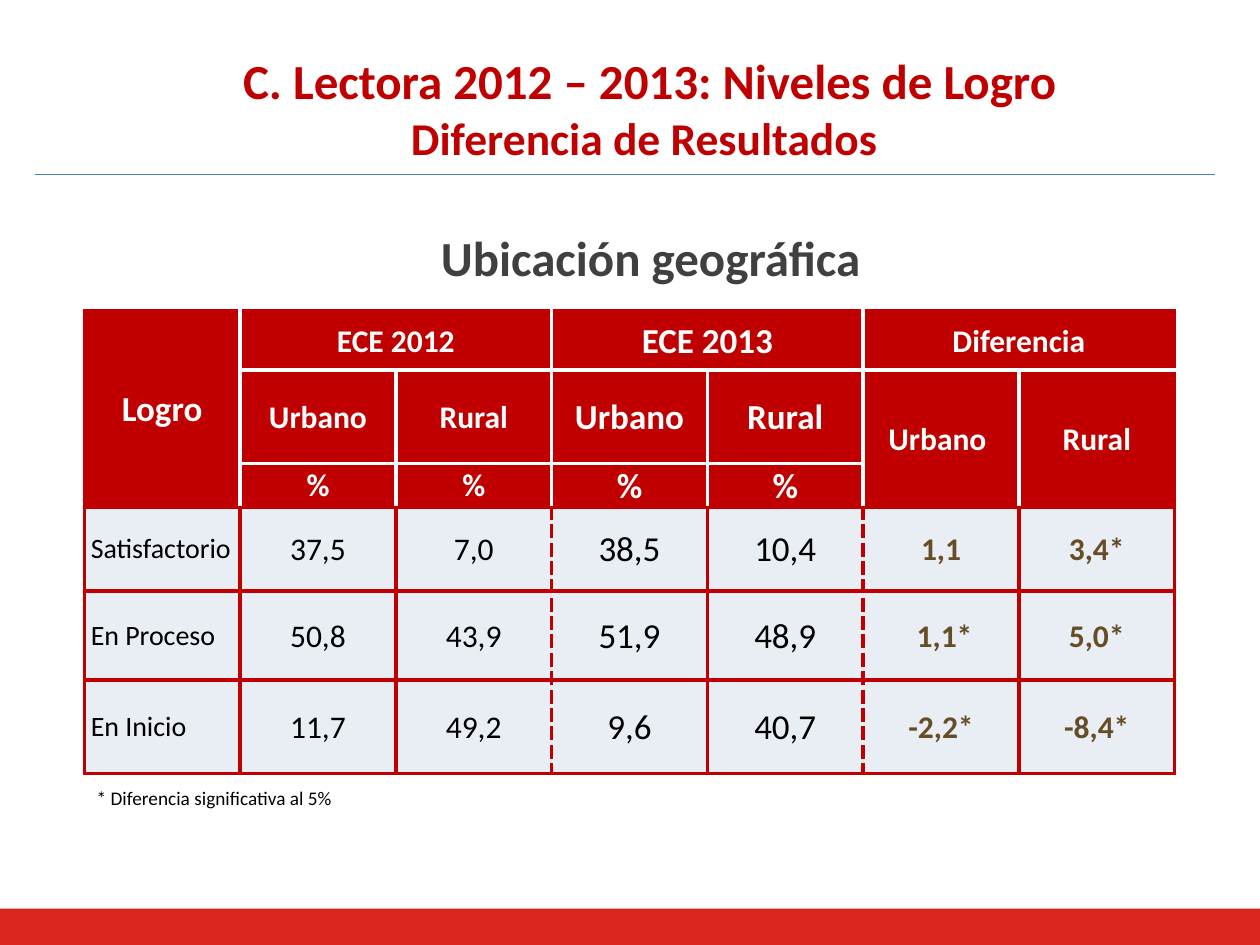
from dataclasses import dataclass

from lxml import etree
from pptx import Presentation
from pptx.dml.color import RGBColor
from pptx.enum.shapes import MSO_CONNECTOR, MSO_SHAPE
from pptx.enum.text import MSO_ANCHOR, PP_ALIGN
from pptx.oxml.ns import qn
from pptx.util import Cm, Pt

LEFT, CENTER = PP_ALIGN.LEFT, PP_ALIGN.CENTER
TOP, MIDDLE = MSO_ANCHOR.TOP, MSO_ANCHOR.MIDDLE
RECTANGLE = MSO_SHAPE.RECTANGLE
STRAIGHT = MSO_CONNECTOR.STRAIGHT


@dataclass(frozen=True)
class Theme:
    font: str = "Calibri"
    red: str = "C00000"
    footer: str = "DA251D"
    rule: str = "4B7EBC"
    white: str = "FFFFFF"
    black: str = "000000"
    gray: str = "404040"
    brown: str = "674D26"
    body_fill: str = "E9EDF4"
    title: int = 28
    subtitle: int = 26
    emphasis: int = 20
    regular: int = 18
    level: int = 16
    note: int = 11
    border: float = 2.25


@dataclass(frozen=True)
class TextLine:
    text: str
    size: int
    color: str
    bold: bool = False


@dataclass(frozen=True)
class TextBlock:
    left: float
    top: float
    width: float
    height: float
    lines: tuple[TextLine, ...]
    alignment: PP_ALIGN = LEFT
    anchor: MSO_ANCHOR = TOP
    wrap: bool = True


@dataclass(frozen=True)
class Span:
    row: int
    column: int
    rows: int
    columns: int


THEME = Theme()

TEXT_BLOCKS = (
    TextBlock(2.49, 0.58, 21.21, 3.18, (
        TextLine("C. Lectora 2012 – 2013: Niveles de Logro", THEME.title, THEME.red, True),
        TextLine("Diferencia de Resultados ", THEME.subtitle, THEME.red, True),
    ), CENTER, MIDDLE),
    TextBlock(8.64, 4.47, 9.07, 1.45, (
        TextLine("Ubicación geográfica", THEME.title, THEME.gray, True),
    ), wrap=False),
    TextBlock(1.7, 15.72, 17.48, 0.74, (
        TextLine("* Diferencia significativa al 5%", THEME.note, THEME.black),
    )),
)

# Table contents; empty cells are covered by a span
TABLE_ROWS = (
    ("Logro", "ECE 2012", "", "ECE 2013", "", "Diferencia", ""),
    ("", "Urbano", "Rural", "Urbano", "Rural", "Urbano ", "Rural"),
    ("", "%", "%", "%", "%", "", ""),
    ("Satisfactorio", "37,5", "7,0", "38,5", "10,4", "1,1", "3,4*"),
    ("En Proceso", "50,8", "43,9", "51,9", "48,9", " 1,1*", "5,0*"),
    ("En Inicio", "11,7", "49,2", "9,6", "40,7", "-2,2*", "-8,4*"),
)
ROW_HEIGHTS = (1.19, 1.88, 0.89, 1.68, 1.8, 1.88)
HEADER_ROWS = 3
COLUMNS = len(TABLE_ROWS[0])
COLUMN_WIDTH = 3.14
CURRENT_YEAR_COLUMNS = (3, 4)
DIFFERENCE_COLUMNS = (5, 6)
DASHED_EDGES = (3, 5)
SPANS = (
    Span(0, 0, 3, 1), Span(0, 1, 1, 2), Span(0, 3, 1, 2),
    Span(0, 5, 1, 2), Span(1, 5, 2, 1), Span(1, 6, 2, 1),
)


def format_paragraph(paragraph, line: TextLine, alignment: PP_ALIGN) -> None:
    paragraph.text = line.text
    paragraph.alignment = alignment
    for run in paragraph.runs:
        run.font.name = THEME.font
        run.font.size = Pt(line.size)
        run.font.bold = line.bold
        run.font.color.rgb = RGBColor.from_string(line.color)


def add_text_block(slide, block: TextBlock) -> None:
    shape = slide.shapes.add_textbox(
        Cm(block.left), Cm(block.top), Cm(block.width), Cm(block.height))
    text_frame = shape.text_frame
    text_frame.word_wrap = block.wrap
    text_frame.vertical_anchor = block.anchor
    text_frame.text = "\n".join(line.text for line in block.lines)
    for paragraph, line in zip(text_frame.paragraphs, block.lines):
        format_paragraph(paragraph, line, block.alignment)


def add_border(cell, side: str, color: str, dashed: bool) -> None:
    properties = cell._tc.get_or_add_tcPr()
    border = etree.SubElement(properties, qn(f"a:ln{side}"), w=str(Pt(THEME.border)))
    fill = etree.SubElement(border, qn("a:solidFill"))
    etree.SubElement(fill, qn("a:srgbClr"), val=color)
    etree.SubElement(border, qn("a:prstDash"), val="sysDash" if dashed else "solid")


def add_borders(cell, row: int, column: int) -> None:
    header = row < HEADER_ROWS
    columns = cell.span_width if cell.is_merge_origin else 1
    rows = cell.span_height if cell.is_merge_origin else 1
    for side, edge in (("L", column), ("R", column + columns)):
        inner = header and 0 < edge < COLUMNS
        add_border(cell, side, THEME.white if inner else THEME.red,
                   not header and edge in DASHED_EDGES)
    for side, edge in (("T", row), ("B", row + rows)):
        inner = header and 0 < edge < HEADER_ROWS
        add_border(cell, side, THEME.white if inner else THEME.red, False)


def cell_line(text: str, row: int, column: int) -> TextLine:
    header = row < HEADER_ROWS
    if column == 0:
        size = THEME.emphasis if header else THEME.level
    else:
        size = THEME.emphasis if column in CURRENT_YEAR_COLUMNS else THEME.regular
    if header:
        return TextLine(text, size, THEME.white, True)
    if column in DIFFERENCE_COLUMNS:
        return TextLine(text, size, THEME.brown, True)
    return TextLine(text, size, THEME.black)


def format_cell(cell, text: str, row: int, column: int) -> None:
    header = row < HEADER_ROWS
    level_name = column == 0 and not header
    add_borders(cell, row, column)
    cell.fill.solid()
    cell.fill.fore_color.rgb = RGBColor.from_string(THEME.red if header else THEME.body_fill)
    cell.vertical_anchor = MIDDLE
    cell.margin_left = cell.margin_right = Cm(0.13 if level_name else 0.03)
    cell.margin_top = Cm(0 if level_name else 0.03)
    cell.margin_bottom = Cm(0)
    if text:
        format_paragraph(cell.text_frame.paragraphs[0], cell_line(text, row, column),
                         LEFT if level_name else CENTER)


def add_results_table(slide) -> None:
    table = slide.shapes.add_table(
        len(TABLE_ROWS), COLUMNS, Cm(1.7), Cm(6.27),
        Cm(COLUMN_WIDTH * COLUMNS), Cm(sum(ROW_HEIGHTS))).table
    table.first_row = table.horz_banding = False
    for column in table.columns:
        column.width = Cm(COLUMN_WIDTH)
    for row, height in zip(table.rows, ROW_HEIGHTS):
        row.height = Cm(height)
    for span in SPANS:
        last_cell = table.cell(span.row + span.rows - 1, span.column + span.columns - 1)
        table.cell(span.row, span.column).merge(last_cell)
    for row, texts in enumerate(TABLE_ROWS):
        for column, text in enumerate(texts):
            format_cell(table.cell(row, column), text, row, column)


def main() -> None:
    presentation = Presentation()
    presentation.slide_width, presentation.slide_height = Cm(25.4), Cm(19.05)
    slide = presentation.slides.add_slide(presentation.slide_layouts[6])

    # Footer band
    footer = slide.shapes.add_shape(RECTANGLE, Cm(0), Cm(18.32), Cm(25.4), Cm(0.73))
    footer.shadow.inherit = False
    footer.fill.solid()
    footer.fill.fore_color.rgb = RGBColor.from_string(THEME.footer)
    footer.line.fill.background()

    # Rule under the title
    rule = slide.shapes.add_connector(STRAIGHT, Cm(0.71), Cm(3.52), Cm(24.5), Cm(3.52))
    rule.line.color.rgb = RGBColor.from_string(THEME.rule)
    rule.line.width = Pt(0.75)
    etree.SubElement(rule._element.spPr, qn("a:effectLst"))

    # Title, heading and note, then the results
    for block in TEXT_BLOCKS:
        add_text_block(slide, block)
    add_results_table(slide)

    presentation.save("out.pptx")


if __name__ == "__main__":
    main()
